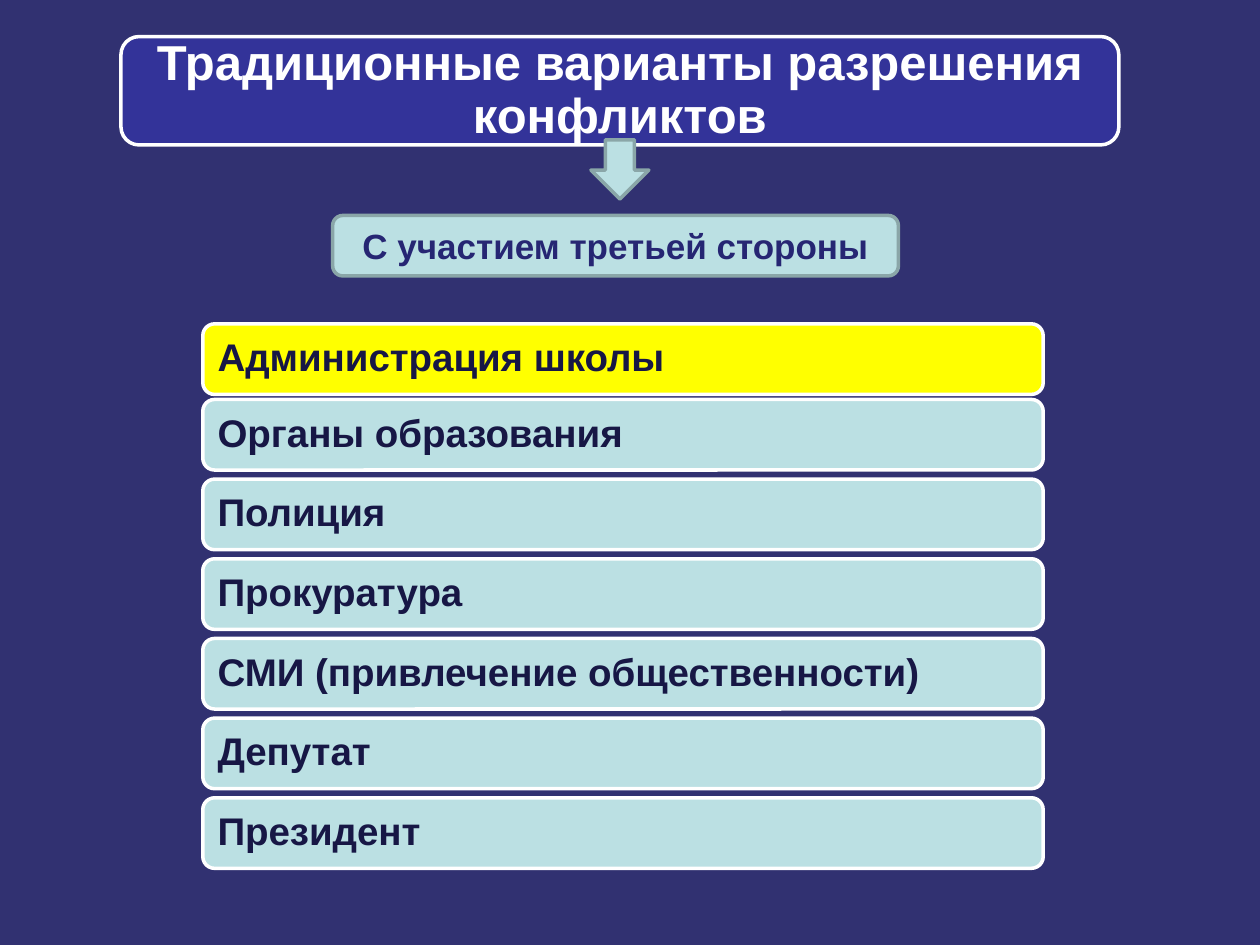
from pptx import Presentation
from pptx.dml.color import RGBColor
from pptx.enum.shapes import MSO_SHAPE
from pptx.enum.text import MSO_ANCHOR, PP_ALIGN
from pptx.util import Inches, Pt

ROUND, DOWN = MSO_SHAPE.ROUNDED_RECTANGLE, MSO_SHAPE.DOWN_ARROW
LEFT, CENTER, MIDDLE = PP_ALIGN.LEFT, PP_ALIGN.CENTER, MSO_ANCHOR.MIDDLE
WHITE, YELLOW, PALE, GREY = "FFFFFF", "FFFF00", "BBE0E3", "8AA6A8"

deck = Presentation()
deck.slide_width, deck.slide_height = Inches(10), Inches(7.5)
slide = deck.slides.add_slide(deck.slide_layouts[6])


def color(code):
    return RGBColor.from_string(code)


def block(kind, x, y, w, h, fill, line, text="", size=20, ink=WHITE,
          align=CENTER, pad=(0.1, 0.05), lead=1.0):
    """Place a shape by percent of the slide, with bold text inside."""
    wide, high = deck.slide_width / 100, deck.slide_height / 100
    shape = slide.shapes.add_shape(
        kind, int(x * wide), int(y * high), int(w * wide), int(h * high))
    shape.shadow.inherit = False
    shape.fill.solid()
    shape.fill.fore_color.rgb = color(fill)
    shape.line.color.rgb = color(line)
    shape.line.width = Pt(2)
    if text:
        frame = shape.text_frame
        frame.word_wrap = True
        frame.vertical_anchor = MIDDLE
        frame.margin_left = frame.margin_right = Inches(pad[0])
        frame.margin_top = frame.margin_bottom = Inches(pad[1])
        para = frame.paragraphs[0]
        para.text, para.alignment, para.line_spacing = text, align, lead
        font = para.font
        font.name, font.size, font.bold = "Arial", Pt(size), True
        font.color.rgb = color(ink)


# Background
slide.background.fill.solid()
slide.background.fill.fore_color.rgb = color("313171")

# Title, arrow and subtitle
block(ROUND, 9.6, 3.87, 79.2, 11.47, "333399", WHITE,
      "Традиционные варианты разрешения конфликтов", 28,
      pad=(0.12, 0.12), lead=0.9)
block(DOWN, 46.9, 14.8, 4.6, 6.27, PALE, GREY)
block(ROUND, 26.4, 22.8, 44.9, 6.4, PALE, GREY,
      "С участием третьей стороны", 20, "262673")

# List of third parties: the first is highlighted and sits closer to the next
parties = ["Администрация школы", "Органы образования", "Полиция",
           "Прокуратура", "СМИ (привлечение общественности)", "Депутат",
           "Президент"]
top, step = 33.84, 8.43
for i, party in enumerate(parties):
    y = top + i * step if i else 34.27
    block(ROUND, 16.1, y, 66.7, 7.47, PALE if i else YELLOW, WHITE,
          party, 22, "171745", LEFT, (0.09, 0.09), 0.9)

deck.save("out.pptx")
